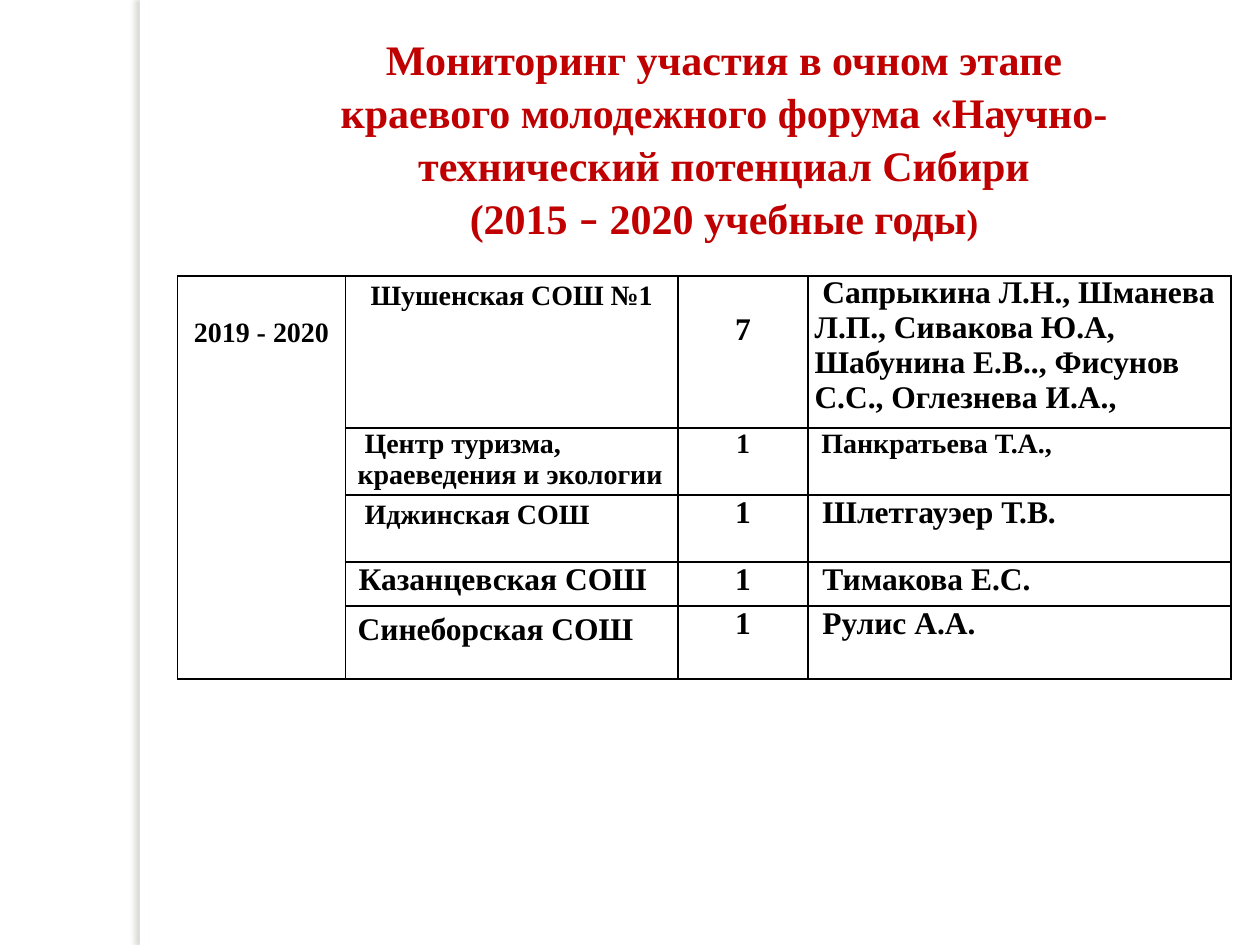
from lxml import etree
from pptx import Presentation
from pptx.dml.color import RGBColor
from pptx.enum.shapes import MSO_SHAPE
from pptx.enum.text import MSO_ANCHOR, MSO_AUTO_SIZE, PP_ALIGN
from pptx.oxml import parse_xml
from pptx.util import Cm, Pt

CENTER, LEFT = PP_ALIGN.CENTER, PP_ALIGN.LEFT
TOP, MIDDLE = MSO_ANCHOR.TOP, MSO_ANCHOR.MIDDLE
NO_AUTOFIT = MSO_AUTO_SIZE.NONE
RECTANGLE = MSO_SHAPE.RECTANGLE
NS = "http://schemas.openxmlformats.org/drawingml/2006/main"

THEME = {
    "font": "Times New Roman", "dash_font": "Calibri",
    "title": "C00000", "text": "000000", "border": "000000",
    "paper": "FFFFFF", "shadow": "736F63",
    "title_size": 24, "bracket_size": 20, "large": 18, "small": 16,
}
LARGE, SMALL = THEME["large"], THEME["small"]

TITLE = [
    [("Мониторинг участия в очном этапе", {})],
    [("краевого молодежного форума «Научно-технический потенциал Сибири", {})],
    [("(2015 ", {}), ("–", {"font": THEME["dash_font"]}), (" 2020 учебные годы", {}),
     (")", {"size": THEME["bracket_size"]})],
]

YEARS = {"lines": ["2019 - 2020"], "size": SMALL, "align": CENTER, "spacing": 1.15, "top": 0.75}
SCHOOLS = [
    {"lines": ["Шушенская СОШ №1"], "size": SMALL, "align": CENTER, "spacing": 1.15},
    {"lines": ["Центр туризма,", "краеведения и экологии"], "size": SMALL,
     "left": 0.25, "indent": 0.14},
    {"lines": ["Иджинская СОШ"], "size": SMALL, "spacing": 1.15, "left": 0.39},
    {"lines": ["Казанцевская СОШ"], "left": 0.27},
    {"lines": ["Синеборская СОШ"], "left": 0.25, "top": 0.13},
]
COUNTS = [
    {"lines": ["7"], "align": CENTER, "top": 0.73},
    {"lines": ["1"], "size": SMALL, "align": CENTER},
    *[{"lines": ["1"], "align": CENTER}] * 3,
]
TEACHERS = [
    {"lines": ["Сапрыкина Л.Н., Шманева Л.П., Сивакова Ю.А, Шабунина Е.В.., "
               "Фисунов С.С., Оглезнева И.А.,"], "indent": 0.16},
    {"lines": ["Панкратьева Т.А.,"], "size": SMALL, "indent": 0.14},
    {"lines": ["Шлетгауэер Т.В."], "indent": 0.16},
    {"lines": ["Тимакова Е.С."], "indent": 0.16},
    {"lines": ["Рулис А.А."], "indent": 0.16},
]
COLUMN_WIDTHS = [3.38, 6.71, 2.62, 8.53]
ROW_HEIGHTS = [3.07, 1.35, 1.35, 0.89, 1.47]


def add_run(paragraph, text, size, color, font=THEME["font"]):
    run = paragraph.add_run()
    run.text = text
    run.font.name = font
    run.font.size = Pt(size)
    run.font.bold = True
    run.font.color.rgb = RGBColor.from_string(color)


def paragraph_at(frame, index):
    return frame.paragraphs[0] if index == 0 else frame.add_paragraph()


def add_side_bar(slide, height):
    bar = slide.shapes.add_shape(RECTANGLE, Cm(2.82), 0, Cm(0.2), height)
    bar.fill.solid()
    bar.fill.fore_color.rgb = RGBColor.from_string(THEME["paper"])
    bar.line.fill.background()
    bar.shadow.inherit = False
    effects = bar.element.spPr.find(f"{{{NS}}}effectLst")
    effects.append(parse_xml(
        f'<a:outerShdw xmlns:a="{NS}" blurRad="{Pt(3)}" dist="{Pt(3)}" dir="10800000" '
        f'algn="tl" rotWithShape="0"><a:srgbClr val="{THEME["shadow"]}">'
        '<a:alpha val="25000"/></a:srgbClr></a:outerShdw>'))


def fill_title(heading):
    heading.left, heading.top = Cm(5.36), Cm(0.58)
    heading.width, heading.height = Cm(18.47), Cm(4.37)
    frame = heading.text_frame
    frame.word_wrap = True
    frame.auto_size = NO_AUTOFIT
    frame.vertical_anchor = MIDDLE
    for index, runs in enumerate(TITLE):
        paragraph = paragraph_at(frame, index)
        paragraph.alignment = CENTER
        paragraph.line_spacing = 1.05
        for text, change in runs:
            add_run(paragraph, text, **{"size": THEME["title_size"],
                                        "color": THEME["title"], **change})


def style_cell(cell):
    properties = cell._tc.get_or_add_tcPr()
    for side in ("lnL", "lnR", "lnT", "lnB"):
        line = etree.SubElement(properties, f"{{{NS}}}{side}", w=str(Pt(1)))
        fill = etree.SubElement(line, f"{{{NS}}}solidFill")
        etree.SubElement(fill, f"{{{NS}}}srgbClr", val=THEME["border"])
    cell.fill.background()
    cell.vertical_anchor = TOP
    cell.margin_left = cell.margin_right = Cm(0.13)
    cell.margin_top = cell.margin_bottom = 0


def fill_cell(cell, entry):
    cell.margin_left = Cm(entry.get("left", 0.13))
    cell.margin_top = Cm(entry.get("top", 0))
    for index, text in enumerate(entry["lines"]):
        paragraph = paragraph_at(cell.text_frame, index)
        paragraph.alignment = entry.get("align", LEFT)
        paragraph.line_spacing = entry.get("spacing", 1.0)
        if index == 0 and "indent" in entry:
            paragraph._p.get_or_add_pPr().set("indent", str(Cm(entry["indent"])))
        add_run(paragraph, text, entry.get("size", LARGE), THEME["text"])


def add_results(slide):
    table = slide.shapes.add_table(
        len(ROW_HEIGHTS), len(COLUMN_WIDTHS), Cm(3.58), Cm(5.56),
        Cm(sum(COLUMN_WIDTHS)), Cm(sum(ROW_HEIGHTS))).table
    table.first_row = table.horz_banding = False
    for column, width in zip(table.columns, COLUMN_WIDTHS):
        column.width = Cm(width)
    for row, height in zip(table.rows, ROW_HEIGHTS):
        row.height = Cm(height)
    for cell in table.iter_cells():
        style_cell(cell)
    table.cell(0, 0).merge(table.cell(len(ROW_HEIGHTS) - 1, 0))
    fill_cell(table.cell(0, 0), YEARS)
    for row_index, entries in enumerate(zip(SCHOOLS, COUNTS, TEACHERS)):
        for column_index, entry in enumerate(entries, start=1):
            fill_cell(table.cell(row_index, column_index), entry)


def main():
    deck = Presentation()
    deck.slide_width, deck.slide_height = Cm(25.4), Cm(19.05)
    slide = deck.slides.add_slide(deck.slide_layouts[5])
    add_side_bar(slide, deck.slide_height)
    fill_title(slide.shapes.title)
    add_results(slide)
    deck.save("out.pptx")


if __name__ == "__main__":
    main()
